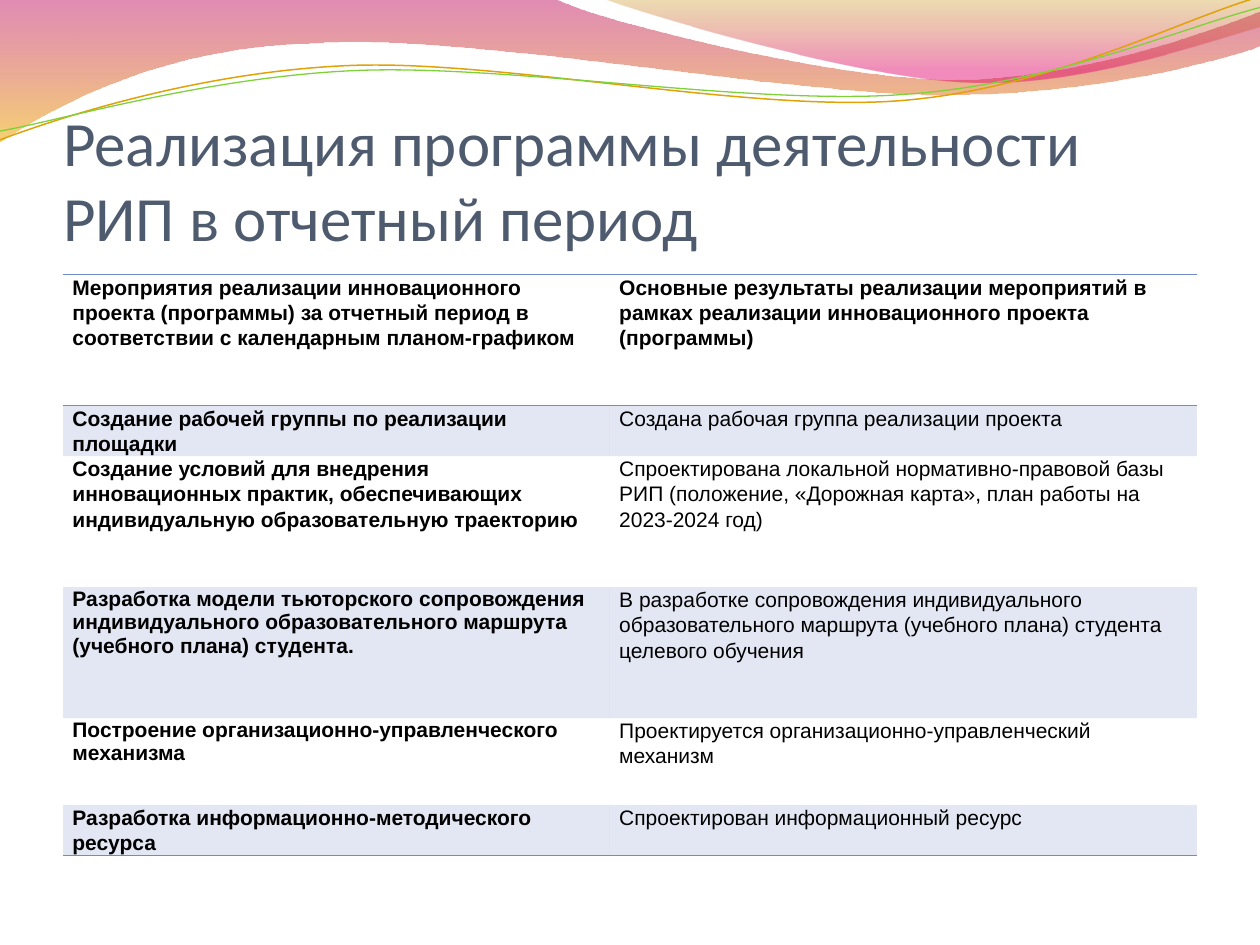
from math import cos, radians, sin

from lxml import etree
from pptx import Presentation
from pptx.dml.color import RGBColor
from pptx.enum.text import MSO_ANCHOR, MSO_AUTO_SIZE, PP_ALIGN
from pptx.oxml import parse_xml
from pptx.oxml.ns import nsdecls, qn
from pptx.util import Inches, Pt

THEME = {
    "title_font": "Calibri", "title_size": 36, "title_color": "4E5B6F",
    "table_font": "Arial", "table_size": 12, "table_color": "000000",
    "accent": "738AC8", "band_opacity": 20,
}
TITLE = "Реализация программы деятельности РИП в отчетный период"

# Row height, activity, result, line spacing of the activity
ROWS = [
    (1.04, "Мероприятия реализации инновационного проекта (программы) за отчетный "
           "период в соответствии с календарным планом-графиком",
     "Основные результаты реализации мероприятий в рамках реализации "
     "инновационного проекта (программы)", 1.07),
    (0.34, "Создание рабочей группы по реализации площадки",
     "Создана рабочая группа реализации проекта", 1.07),
    (1.04, "Создание условий для внедрения инновационных практик, обеспечивающих "
           "индивидуальную образовательную траекторию",
     "Спроектирована локальной нормативно-правовой базы РИП (положение, "
     "«Дорожная карта», план работы на 2023-2024 год)", 1.07),
    (1.04, "Разработка модели тьюторского сопровождения индивидуального "
           "образовательного маршрута (учебного плана) студента.",
     "В разработке сопровождения индивидуального образовательного маршрута "
     "(учебного плана) студента целевого обучения", 1.07 - 0.07),
    (0.69, "Построение организационно-управленческого механизма",
     "Проектируется организационно-управленческий механизм", 1.0),
    (0.34, "Разработка информационно-методического ресурса",
     "Спроектирован информационный ресурс", 1.07),
]
COLUMN_WIDTHS = [4.34, 4.66]
NO_GRID_STYLE = "{2D5ABB26-0587-4C30-8999-92F81FD0307C}"

# Outlines: a start point, then lines (one point) or curves (three points)
# Gradient stops: position %, colour, opacity %
WAVES = [
    ([[(0, 0)], [(4.4, -0.01)],
      [(4.76, 0.17), (6.64, 0.63), (7.58, 0.63)],
      [(8.53, 0.63), (9.58, 0.26), (10, 0.09)], [(10.01, 0.36)],
      [(9.83, 0.44), (8.7, 0.76), (7.46, 0.75)],
      [(6.22, 0.75), (3.82, 0.28), (2.57, 0.34)],
      [(1.29, 0.36), (0.46, 0.83), (-0.01, 1.13)], [(0, 0)]],
     [(0, "BD0059", 45), (100, "F0AB00", 55)]),
    ([[(4.79, -0.01)],
      [(5.09, 0.11), (6.82, 0.62), (7.69, 0.65)],
      [(8.56, 0.69), (9.61, 0.32), (10, 0.21)], [(10, 0)], [(4.79, -0.01)]],
     [(0, "C38B00", 30), (80, "E1006B", 45)]),
]
LINE_ROTATION = 357.3
# Outline, centre of rotation, colour, width
WAVE_LINES = [
    ([[(0, 1.11)],
      [(0.48, 0.93), (1.58, 0.57), (2.77, 0.52)],
      [(3.95, 0.47), (5.93, 0.89), (7.13, 0.8)],
      [(8.33, 0.71), (9.38, 0.15), (9.98, -0.02)]], (4.99, 0.57), "E0A209", 0.85),
    ([[(0, 1.04)],
      [(0.47, 0.96), (1.64, 0.61), (2.83, 0.56)],
      [(4.03, 0.51), (5.97, 0.84), (7.17, 0.75)],
      [(8.36, 0.67), (9.41, 0.21), (10, 0.06)]], (5, 0.59), "7FD13B", 0.75),
]


def turn(outline, center, degrees):
    angle, (cx, cy) = radians(degrees), center
    return [[(cx + (x - cx) * cos(angle) - (y - cy) * sin(angle),
              cy + (x - cx) * sin(angle) + (y - cy) * cos(angle)) for x, y in segment]
            for segment in outline]


def add_outline(shapes, outline, close):
    points = [(Inches(x), Inches(y)) for segment in outline for x, y in segment]
    builder = shapes.build_freeform(*points[0])
    builder.add_line_segments(points[1:], close=close)
    shape = builder.convert_to_shape()
    shape.shadow.inherit = False
    # Join each three-point segment into one cubic curve
    steps = iter(shape.element.findall(".//" + qn("a:lnTo")))
    for segment in outline[1:]:
        parts = [next(steps) for _ in segment]
        if len(parts) == 3:
            curve = etree.Element(qn("a:cubicBezTo"))
            parts[0].addprevious(curve)
            for part in parts:
                curve.append(part[0])
                part.getparent().remove(part)
    return shape


def add_waves(slide):
    for outline, stops in WAVES:
        shape = add_outline(slide.shapes, outline, True)
        shape.line.fill.background()
        stop_xml = "".join(
            f'<a:gs pos="{position * 1000}"><a:srgbClr val="{color}">'
            f'<a:alpha val="{opacity * 1000}"/></a:srgbClr></a:gs>'
            for position, color, opacity in stops)
        gradient = parse_xml(f'<a:gradFill {nsdecls("a")}><a:gsLst>{stop_xml}</a:gsLst>'
                             '<a:lin ang="5400000" scaled="0"/></a:gradFill>')
        shape.element.spPr.find(qn("a:custGeom")).addnext(gradient)
    group = slide.shapes.add_group_shape()
    for outline, center, color, width in WAVE_LINES:
        shape = add_outline(group.shapes, turn(outline, center, -LINE_ROTATION), False)
        shape.rotation = LINE_ROTATION
        shape.fill.background()
        shape.line.color.rgb = RGBColor.from_string(color)
        shape.line.width = Pt(width)


def style_font(font, kind):
    font.name = THEME[f"{kind}_font"]
    font.size = Pt(THEME[f"{kind}_size"])
    font.color.rgb = RGBColor.from_string(THEME[f"{kind}_color"])


def add_title(slide):
    title = slide.shapes.title
    title.left, title.top, title.width, title.height = map(Inches, (0.5, 0.77, 9, 1.25))
    frame = title.text_frame
    frame.text = TITLE
    frame.word_wrap = True
    frame.auto_size = MSO_AUTO_SIZE.NONE
    frame.vertical_anchor = MSO_ANCHOR.BOTTOM
    frame.margin_left = frame.margin_right = frame.margin_bottom = 0
    frame.margin_top = Inches(0.05)
    paragraph = frame.paragraphs[0]
    paragraph.alignment = PP_ALIGN.LEFT
    style_font(paragraph.font, "title")
    # Keep the title in front of the waves
    title.element.getparent().append(title.element)


def fill_cell(cell, text, bold, spacing, banded, borders):
    cell.margin_left = cell.margin_right = Pt(5.4)
    cell.margin_top = cell.margin_bottom = 0
    cell.text = text
    paragraph = cell.text_frame.paragraphs[0]
    paragraph.line_spacing = spacing
    style_font(paragraph.font, "table")
    paragraph.font.bold = bold
    properties = cell.text_frame._txBody.getparent().find(qn("a:tcPr"))
    if banded:
        cell.fill.solid()
        cell.fill.fore_color.rgb = RGBColor.from_string(THEME["accent"])
        color = properties.find(".//" + qn("a:srgbClr"))
        etree.SubElement(color, qn("a:alpha"), val=str(THEME["band_opacity"] * 1000))
    else:
        cell.fill.background()
    for index, side in enumerate(borders):
        properties.insert(index, parse_xml(
            f'<a:ln{side} {nsdecls("a")} w="{Pt(1)}"><a:solidFill>'
            f'<a:srgbClr val="{THEME["accent"]}"/></a:solidFill></a:ln{side}>'))


def add_results_table(slide):
    frame = slide.shapes.add_table(len(ROWS), 2, Inches(0.5), Inches(2.18),
                                   Inches(9), Inches(4.64))
    table = frame.table
    table.first_row = table.horz_banding = False
    frame.element.find(".//" + qn("a:tableStyleId")).text = NO_GRID_STYLE
    for column, width in zip(table.columns, COLUMN_WIDTHS):
        column.width = Inches(width)
    borders = {0: "TB", len(ROWS) - 1: "B"}
    for index, (height, activity, result, spacing) in enumerate(ROWS):
        table.rows[index].height = Inches(height)
        banded, sides = index % 2 == 1, borders.get(index, "")
        fill_cell(table.cell(index, 0), activity, True, spacing, banded, sides)
        fill_cell(table.cell(index, 1), result, index == 0, 1.07, banded, sides)
    frame.height = Inches(4.64)


def main():
    presentation = Presentation()
    presentation.slide_width, presentation.slide_height = Inches(10), Inches(7.5)
    slide = presentation.slides.add_slide(presentation.slide_layouts[5])
    add_waves(slide)
    add_title(slide)
    add_results_table(slide)
    presentation.save("out.pptx")


if __name__ == "__main__":
    main()
